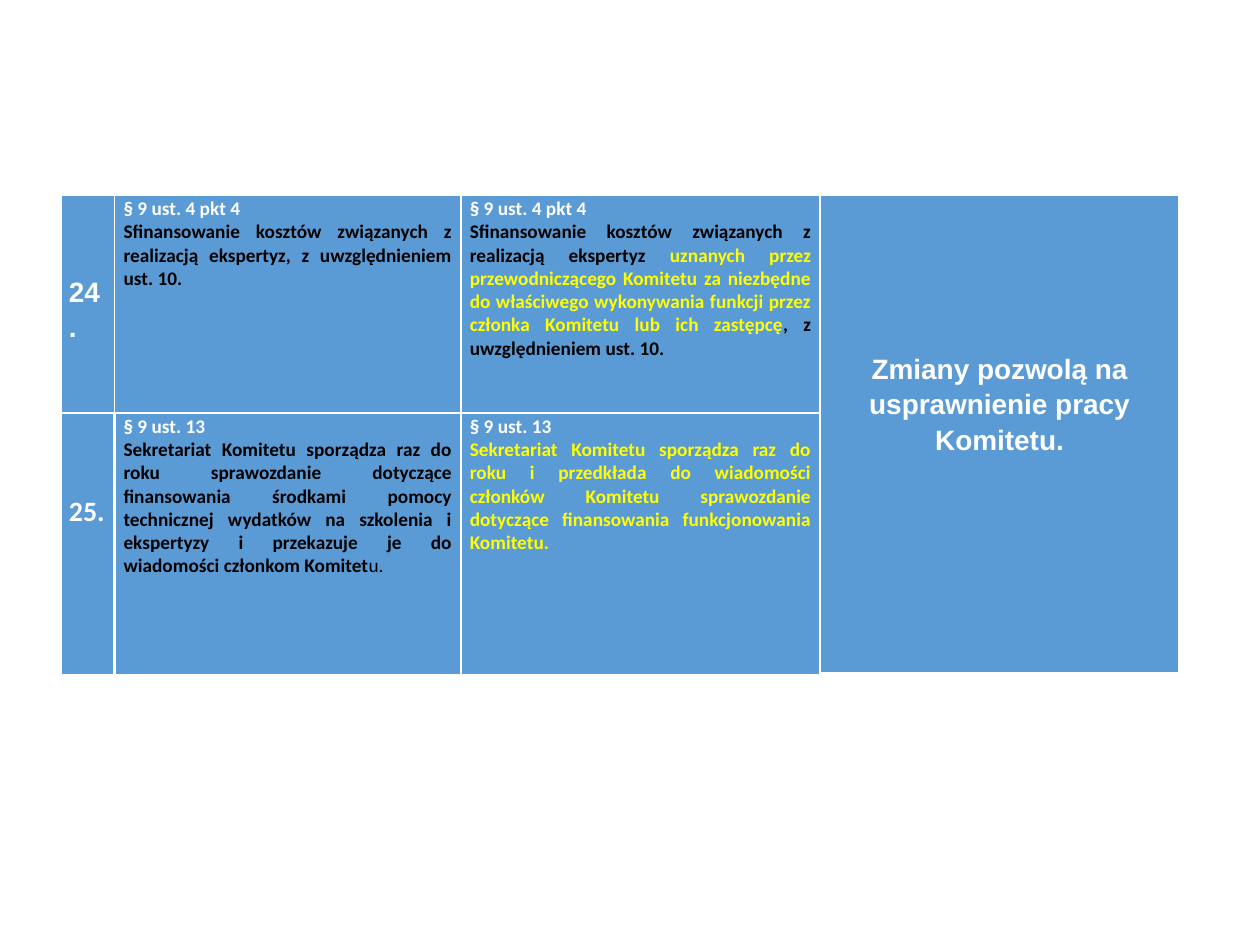
from dataclasses import dataclass

from lxml.etree import SubElement
from pptx import Presentation
from pptx.dml.color import RGBColor
from pptx.enum.text import PP_ALIGN
from pptx.oxml.ns import qn
from pptx.util import Cm, Pt

WHITE, BLACK, YELLOW, BLUE = "FFFFFF", "000000", "FFFF00", "5B9BD5"
COLUMN_WIDTHS = (1.07, 6.98, 7.24, 7.24)
ROW_HEIGHTS = (4.39, 5.23)


@dataclass
class Span:
    text: str
    color: str = WHITE
    size: float = 11
    font: str = "Calibri"
    bold: bool = True


@dataclass
class Line:
    spans: list[Span]
    spacing: object = 1.07
    align: PP_ALIGN = PP_ALIGN.JUSTIFY


@dataclass
class Entry:
    row: int
    column: int
    lines: list[Line]
    side_margin: float = 0.18
    top_margin: float = 0
    borders: tuple = (1, 1, 1, 1)  # left, right, top, bottom in points


def rgb(color: str) -> RGBColor:
    return RGBColor.from_string(color)


def label(row: int, column: int, text: str, font: str, top: float,
          align: PP_ALIGN, borders: tuple) -> Entry:
    """Large white text lowered from the top edge of its cell."""
    line = Line([Span(text, size=16, font=font)], 1.15, align)
    return Entry(row, column, [line], 0.15, top, borders)


def provision(row: int, column: int, heading: str, body: list[Span], borders: tuple) -> Entry:
    """Paragraph reference followed by its wording."""
    return Entry(row, column, [Line([Span(heading)]), Line(body, Pt(13.3))], borders=borders)


def draw_borders(cell, widths: tuple) -> None:
    properties = cell._tc.get_or_add_tcPr()
    for side, width in zip("LRTB", widths):
        border = SubElement(properties, qn(f"a:ln{side}"), w=str(Pt(width)))
        fill = SubElement(border, qn("a:solidFill"))
        SubElement(fill, qn("a:srgbClr"), val=WHITE)


def write_line(para, line: Line) -> None:
    para.alignment = line.align
    para.line_spacing = line.spacing
    for item in line.spans:
        span = para.add_run()
        span.text = item.text
        span.font.name = item.font
        span.font.size = Pt(item.size)
        span.font.bold = item.bold
        span.font.color.rgb = rgb(item.color)


def fill_cell(cell, entry: Entry) -> None:
    draw_borders(cell, entry.borders)
    cell.fill.solid()
    cell.fill.fore_color.rgb = rgb(BLUE)
    cell.margin_left = cell.margin_right = Cm(entry.side_margin)
    cell.margin_top, cell.margin_bottom = Cm(entry.top_margin), 0
    frame = cell.text_frame
    for index, line in enumerate(entry.lines):
        write_line(frame.add_paragraph() if index else frame.paragraphs[0], line)


ENTRIES = [
    label(0, 0, "24.", "Arial", 1.55, PP_ALIGN.LEFT, (1, 1, 1, 1.5)),
    provision(0, 1, "§ 9 ust. 4 pkt 4", [
        Span("Sfinansowanie kosztów związanych z realizacją ekspertyz, "
             "z uwzględnieniem ust. 10.", BLACK),
    ], (1, 1, 1, 1.5)),
    provision(0, 2, "§ 9 ust. 4 pkt 4", [
        Span("Sfinansowanie kosztów związanych z realizacją ekspertyz ", BLACK),
        Span("uznanych przez przewodniczącego Komitetu za niezbędne do właściwego "
             "wykonywania funkcji przez członka Komitetu lub ich zastępcę", YELLOW),
        Span(", z uwzględnieniem ust. 10.", BLACK),
    ], (1, 1.5, 1, 1.5)),
    label(0, 3, "Zmiany pozwolą na usprawnienie pracy Komitetu.", "Arial", 3.1,
          PP_ALIGN.CENTER, (1.5, 1, 1, 3)),
    label(1, 0, "25.", "Calibri", 1.55, PP_ALIGN.LEFT, (1, 1.5, 1.5, 1)),
    provision(1, 1, "§ 9 ust. 13", [
        Span("Sekretariat Komitetu sporządza raz do roku sprawozdanie dotyczące "
             "finansowania środkami pomocy technicznej wydatków na szkolenia i "
             "ekspertyzy i przekazuje je do wiadomości członkom Komitet", BLACK),
        Span("u.", BLACK, bold=False),
    ], (1.5, 1, 1.5, 1)),
    provision(1, 2, "§ 9 ust. 13", [
        Span("Sekretariat Komitetu sporządza raz do roku i przedkłada do wiadomości "
             "członków Komitetu sprawozdanie dotyczące finansowania funkcjonowania "
             "Komitetu.", YELLOW),
    ], (1, 1.5, 1.5, 1)),
]


def main() -> None:
    deck = Presentation()
    deck.slide_width, deck.slide_height = Cm(25.4), Cm(19.05)
    page = deck.slides.add_slide(deck.slide_layouts[6])
    table = page.shapes.add_table(
        len(ROW_HEIGHTS), len(COLUMN_WIDTHS), Cm(1.24), Cm(3.94),
        Cm(sum(COLUMN_WIDTHS)), Cm(sum(ROW_HEIGHTS))).table
    table.first_row = table.horz_banding = False
    for column, width in zip(table.columns, COLUMN_WIDTHS):
        column.width = Cm(width)
    for row, height in zip(table.rows, ROW_HEIGHTS):
        row.height = Cm(height)
    table.cell(0, 3).merge(table.cell(1, 3))
    for entry in ENTRIES:
        fill_cell(table.cell(entry.row, entry.column), entry)
    deck.save("out.pptx")


if __name__ == "__main__":
    main()
